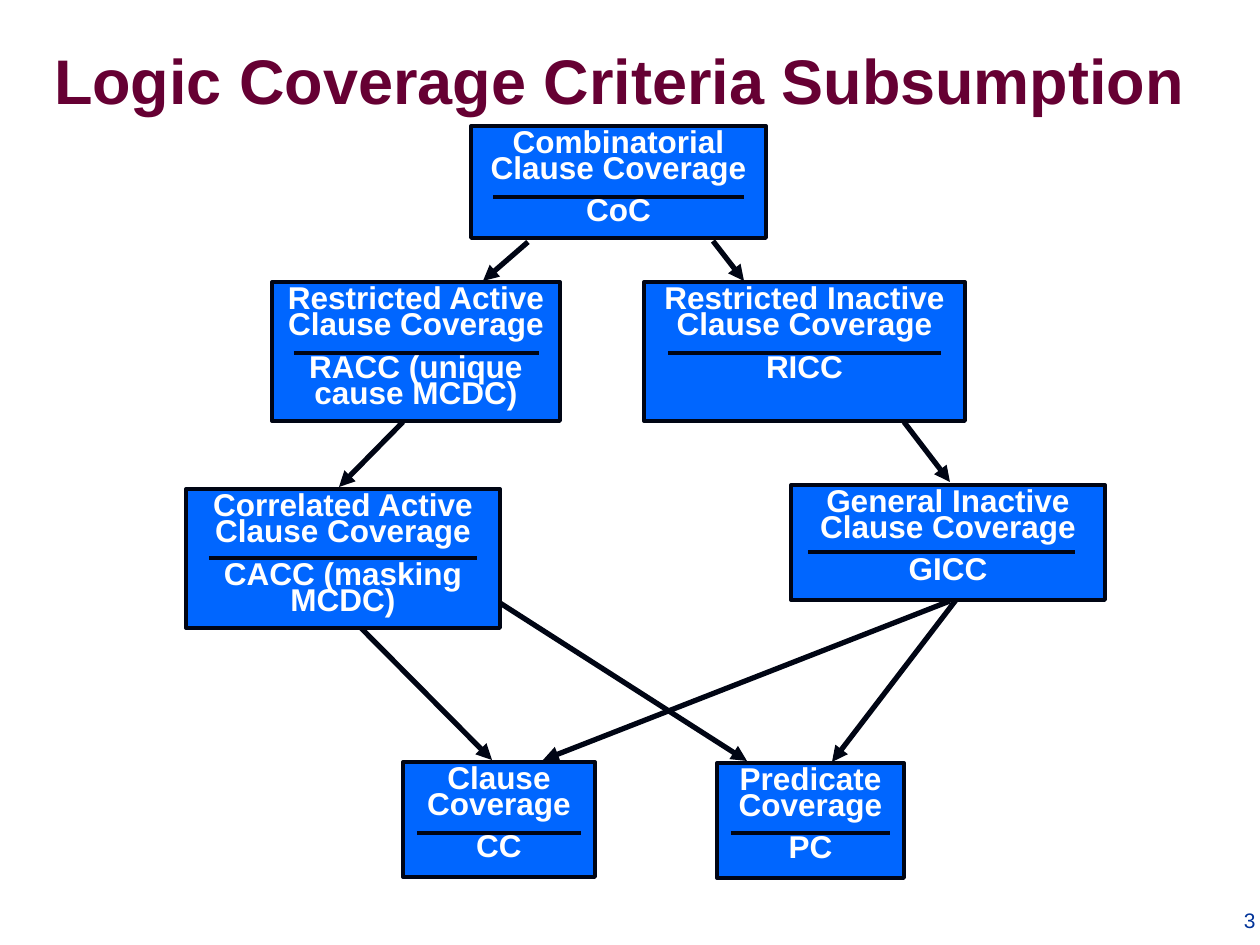
from dataclasses import dataclass

import pptx
import pptx.dml.color
import pptx.enum.shapes
import pptx.enum.text
import pptx.oxml
import pptx.oxml.ns
import pptx.util

EMU_PER_PX = 914400 / 126
FONT = "Arial"
BOX_FILL = "0066FF"
INK = "000514"
WHITE = "FFFFFF"
TITLE_COLOUR = "660033"
NUMBER_COLOUR = "003399"

ALIGN = pptx.enum.text.PP_ALIGN
ANCHOR = pptx.enum.text.MSO_ANCHOR


@dataclass
class Criterion:
    name: str
    short_name: str
    left: int
    top: int
    width: int
    height: int
    rule_left: int
    rule_right: int
    rule_y: int


@dataclass
class Arrow:
    """A subsumption arrow from the stronger criterion to the weaker one."""
    start_x: int
    start_y: int
    end_x: int
    end_y: int


CRITERIA = [
    Criterion("Combinatorial Clause Coverage", "CoC", 471, 126, 295, 112, 493, 744, 197),
    Criterion("Restricted Active Clause Coverage", "RACC (unique cause MCDC)",
              272, 282, 288, 139, 294, 539, 353),
    Criterion("Restricted Inactive Clause Coverage", "RICC", 644, 282, 321, 139, 668, 941, 353),
    Criterion("Correlated Active Clause Coverage", "CACC (masking MCDC)",
              186, 489, 314, 139, 209, 477, 558),
    Criterion("General Inactive Clause Coverage", "GICC", 791, 485, 314, 115, 808, 1075, 552),
    Criterion("Clause Coverage", "CC", 403, 762, 192, 115, 417, 581, 833),
    Criterion("Predicate Coverage", "PC", 717, 763, 187, 115, 731, 890, 833),
]

ARROWS = [
    Arrow(528, 242, 483, 281),   # CoC to RACC
    Arrow(713, 241, 744, 281),   # CoC to RICC
    Arrow(403, 422, 339, 487),   # RACC to CACC
    Arrow(904, 422, 950, 482),   # RICC to GICC
    Arrow(361, 628, 492, 760),   # CACC to CC
    Arrow(500, 603, 747, 761),   # CACC to PC
    Arrow(950, 601, 543, 760),   # GICC to CC
    Arrow(956, 600, 832, 762),   # GICC to PC
]


def px(length: int) -> int:
    return pptx.util.Emu(round(length * EMU_PER_PX))


def colour(value: str) -> pptx.dml.color.RGBColor:
    return pptx.dml.color.RGBColor.from_string(value)


def format_paragraph(paragraph, size: int, hex_colour: str, bold: bool, alignment) -> None:
    paragraph.alignment = alignment
    for run in paragraph.runs:
        run.font.name = FONT
        run.font.size = pptx.util.Pt(size)
        run.font.bold = bold
        run.font.color.rgb = colour(hex_colour)


def add_line(slide, start_x: int, start_y: int, end_x: int, end_y: int,
             width: float, arrowhead: bool = False) -> None:
    connector = slide.shapes.add_connector(
        pptx.enum.shapes.MSO_CONNECTOR.STRAIGHT,
        px(start_x), px(start_y), px(end_x), px(end_y))
    connector.line.color.rgb = colour(INK)
    connector.line.width = pptx.util.Pt(width)
    if arrowhead:
        tail = pptx.oxml.parse_xml(
            f'<a:tailEnd {pptx.oxml.ns.nsdecls("a")} type="triangle"/>')
        connector.line._get_or_add_ln().append(tail)
    effects = pptx.oxml.parse_xml(f'<a:effectLst {pptx.oxml.ns.nsdecls("a")}/>')
    connector._element.spPr.append(effects)


def add_criterion(slide, criterion: Criterion) -> None:
    box = slide.shapes.add_shape(
        pptx.enum.shapes.MSO_SHAPE.RECTANGLE,
        px(criterion.left), px(criterion.top), px(criterion.width), px(criterion.height))
    box.shadow.inherit = False
    box.fill.solid()
    box.fill.fore_color.rgb = colour(BOX_FILL)
    box.line.color.rgb = colour(INK)
    box.line.width = pptx.util.Pt(2.25)

    text_frame = box.text_frame
    text_frame.word_wrap = True
    text_frame.vertical_anchor = ANCHOR.TOP
    text_frame.text = f"{criterion.name}\n{criterion.short_name}"
    for paragraph in text_frame.paragraphs:
        format_paragraph(paragraph, 18, WHITE, True, ALIGN.CENTER)
        paragraph.line_spacing = 0.7
    text_frame.paragraphs[1].space_before = pptx.util.Pt(9)

    # Rule between the full and the short name
    add_line(slide, criterion.rule_left, criterion.rule_y,
             criterion.rule_right, criterion.rule_y, 2.25)


def set_title(slide, text: str) -> None:
    title = slide.shapes.title
    title.left, title.top, title.width, title.height = px(26), px(14), px(1187), px(130)
    title.text_frame.text = text
    title.text_frame.word_wrap = True
    title.text_frame.vertical_anchor = ANCHOR.MIDDLE
    format_paragraph(title.text_frame.paragraphs[0], 36, TITLE_COLOUR, True, ALIGN.CENTER)


def add_slide_number(slide, number: str) -> None:
    text_box = slide.shapes.add_textbox(px(995), px(895), px(273), px(44))
    text_box.text_frame.word_wrap = True
    text_box.text_frame.vertical_anchor = ANCHOR.BOTTOM
    text_box.text_frame.text = number
    format_paragraph(text_box.text_frame.paragraphs[0], 12, NUMBER_COLOUR, False, ALIGN.RIGHT)


def main() -> None:
    presentation = pptx.Presentation()
    presentation.slide_width, presentation.slide_height = px(1260), px(945)
    slide = presentation.slides.add_slide(presentation.slide_layouts[5])

    set_title(slide, "Logic Coverage Criteria Subsumption")
    add_slide_number(slide, "3")

    # Criteria boxes, then the arrows between them
    for criterion in CRITERIA:
        add_criterion(slide, criterion)
    for arrow in ARROWS:
        add_line(slide, arrow.start_x, arrow.start_y, arrow.end_x, arrow.end_y, 3, True)

    presentation.save("out.pptx")


if __name__ == "__main__":
    main()
